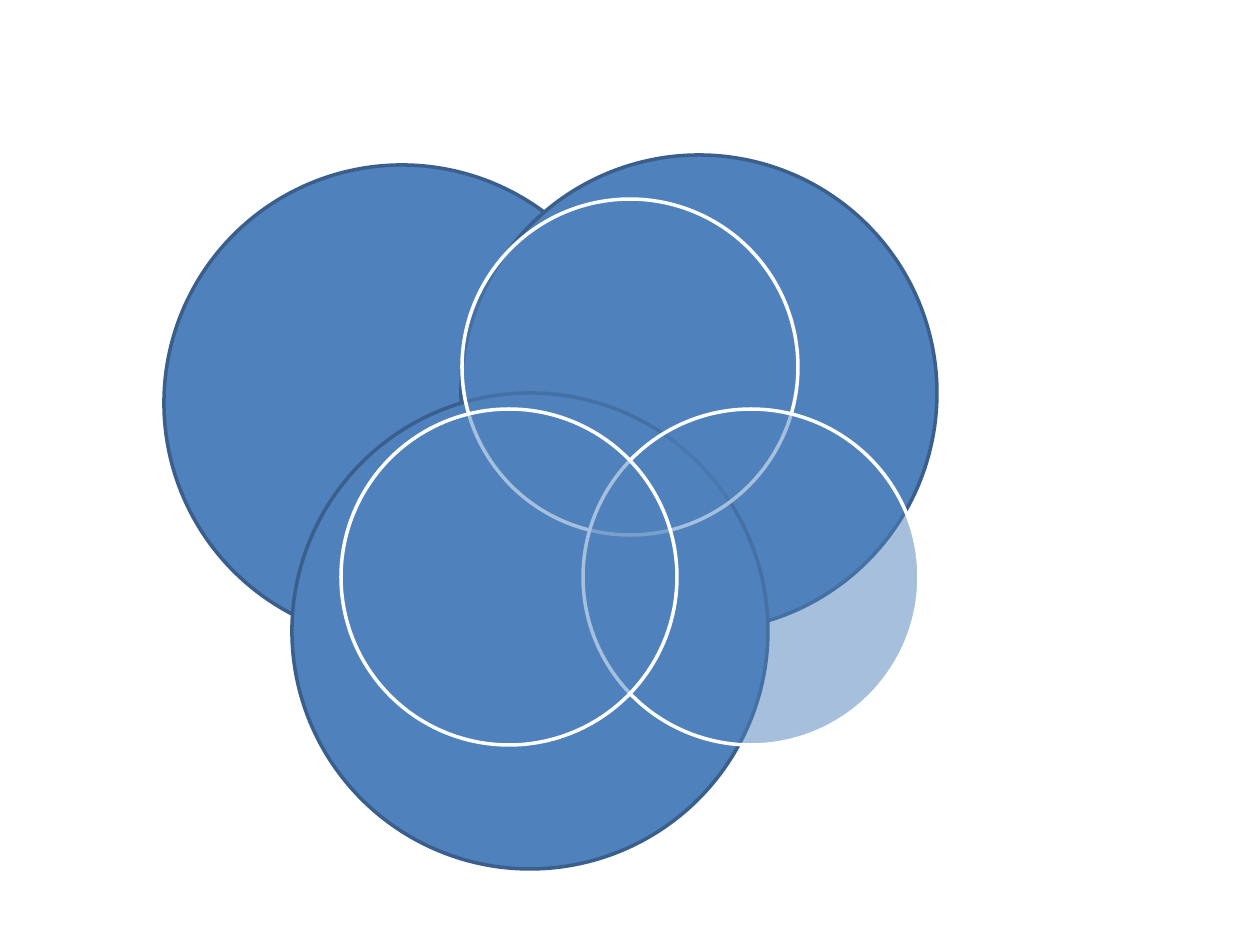
from lxml.etree import SubElement
from pptx import Presentation
from pptx.dml.color import RGBColor
from pptx.enum.shapes import MSO_SHAPE
from pptx.oxml.ns import qn
from pptx.util import Emu, Pt

EMU_PER_INCH, PX_PER_INCH = 914400, 126
COLORS = {"disc": "4F81BD", "disc_edge": "3A5F8C", "venn_edge": "FFFFFF"}
DISC_FORMAT = {"fill": "disc", "edge": "disc_edge", "alpha": 100}
VENN_FORMAT = {"fill": "disc", "edge": "venn_edge", "alpha": 50}


def px(length):
    """Turn a length in px into EMU."""
    return Emu(round(length * EMU_PER_INCH / PX_PER_INCH))


def add_circle(shapes, left, top, diameter, style):
    """Draw one outlined circle in the given style."""
    circle = shapes.add_shape(
        MSO_SHAPE.OVAL, px(left), px(top), px(diameter), px(diameter)
    )
    circle.shadow.inherit = False
    circle.fill.solid()
    circle.line.width = Pt(2)
    for part, key in ((circle.fill.fore_color, "fill"), (circle.line.color, "edge")):
        part.rgb = RGBColor.from_string(COLORS[style[key]])
    if style["alpha"] < 100:
        fill_color = circle._element.spPr.find(qn("a:solidFill"))[0]
        SubElement(fill_color, qn("a:alpha"), val=str(style["alpha"] * 1000))


def add_discs(slide, left, top):
    """Place the three large overlapping discs."""
    for dx, dy in ((0, 10), (297, 0), (128, 238)):
        add_circle(slide.shapes, left + dx, top + dy, 476, DISC_FORMAT)


def add_venn(slide, left, top, width, height):
    """Place a group of three translucent circles in a triangle."""
    diameter = 336
    spread, drop = width - diameter, height - diameter
    venn = slide.shapes.add_group_shape()
    for dx, dy in ((spread / 2, 0), (spread, drop), (0, drop)):
        add_circle(venn.shapes, left + dx, top + dy, diameter, VENN_FORMAT)


def main():
    """Build and save the slide."""
    deck = Presentation()
    deck.slide_width, deck.slide_height = px(1260), px(945)
    slide = deck.slides.add_slide(deck.slide_layouts[6])
    add_discs(slide, 164, 155)
    add_venn(slide, 341, 199, 578, 546)
    deck.save("out.pptx")


if __name__ == "__main__":
    main()
